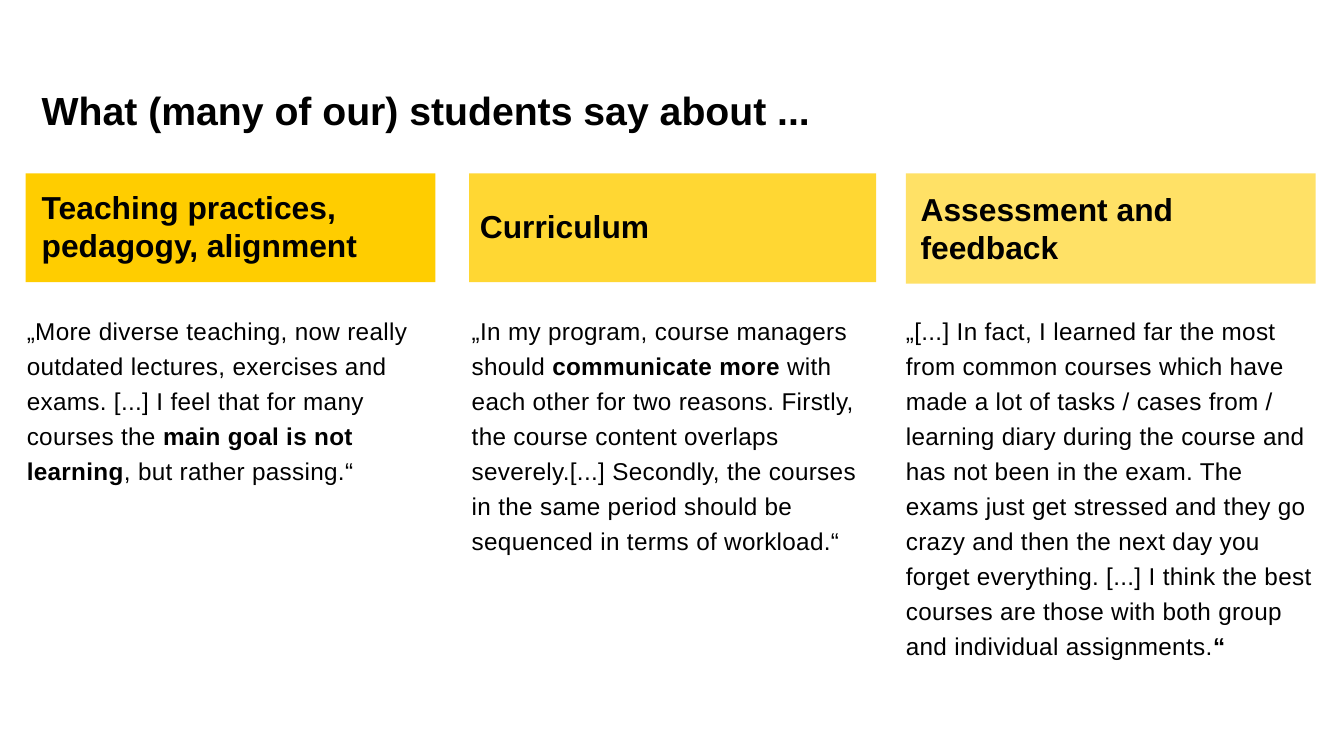
from lxml.etree import SubElement
from pptx import Presentation
from pptx.dml.color import RGBColor
from pptx.enum.shapes import MSO_SHAPE
from pptx.enum.text import MSO_ANCHOR, MSO_AUTO_SIZE, PP_ALIGN
from pptx.oxml.ns import qn
from pptx.util import Inches, Pt


def color(value):
    return RGBColor.from_string(value)


def write(box, spans, size, spacing, bold=False):
    frame = box.text_frame
    frame.word_wrap = True
    frame.auto_size = MSO_AUTO_SIZE.NONE
    frame.vertical_anchor = MSO_ANCHOR.TOP
    frame.margin_left = frame.margin_right = 0
    frame.margin_top = frame.margin_bottom = 0
    para = frame.paragraphs[0]
    para.alignment = PP_ALIGN.LEFT
    para.line_spacing = spacing
    para.space_before = Pt(0)
    para.font.name = "Arial"
    para.font.size = Pt(size)
    para.font.bold = bold
    para.font.color.rgb = color("000000")
    for text, strong in spans:
        span = para.add_run()
        span.text = text
        if strong:
            span.font.bold = True
    return para


deck = Presentation()
deck.slide_width = Inches(10)
deck.slide_height = Inches(10) * 9 // 16
page = deck.slides.add_slide(deck.slide_layouts[5])

title = page.shapes.title
title.left, title.top = Inches(0.31), Inches(0.57)
title.width, title.height = Inches(6.2), Inches(0.41)
write(title, [("What (many of our) students say about ...", False)], 21, 1.2, True)

columns = [
    (0.19, 3.05, 0.81, 100, "Teaching practices, pedagogy, alignment", (0.31, 1.4, 2.68, 0.57),
     (0.2, 3.04, 2.43),
     [("„More diverse teaching, now really outdated lectures, exercises and exams. [...] "
       "I feel that for many courses the ", False),
      ("main goal is not learning", True),
      (", but rather passing.“", False)]),
    (3.49, 3.03, 0.81, 80, "Curriculum", (3.57, 1.54, 2.92, 0.29),
     (3.51, 3.01, 2.43),
     [("„In my program, course managers should ", False),
      ("communicate more", True),
      (" with each other for two reasons. Firstly, the course content overlaps "
       "severely.[...] Secondly, the courses in the same period should be sequenced "
       "in terms of workload.“", False)]),
    (6.74, 3.05, 0.82, 60, "Assessment and feedback", (6.85, 1.41, 2.94, 0.57),
     (6.74, 3.05, 3.25),
     [("„[...] In fact, I learned far the most from common courses which have made "
       "a lot of tasks / cases from / learning diary during the course and has not "
       "been in the exam. The exams just get stressed and they go crazy and then the "
       "next day you forget everything. [...] I think the best courses are those with "
       "both group and individual assignments.", False),
      ("“", True)]),
]

for left, width, height, opacity, heading, heading_place, quote_place, quote in columns:
    band = page.shapes.add_shape(MSO_SHAPE.RECTANGLE, Inches(left), Inches(1.29),
                                 Inches(width), Inches(height))
    band.shadow.inherit = False
    band.line.fill.background()
    band.fill.solid()
    band.fill.fore_color.rgb = color("FFCD00")
    if opacity < 100:
        tint = band.element.spPr.find(qn("a:solidFill"))[0]
        SubElement(tint, qn("a:alpha")).set("val", str(opacity * 1000))

    heading_box = page.shapes.add_textbox(*[Inches(value) for value in heading_place])
    write(heading_box, [(heading, False)], 17, 1.0, True)

    quote_left, quote_width, quote_height = quote_place
    quote_box = page.shapes.add_textbox(Inches(quote_left), Inches(2.31),
                                        Inches(quote_width), Inches(quote_height))
    for span in write(quote_box, quote, 13, 1.2).runs:
        span.font._element.set("spc", "20")

deck.save("out.pptx")
